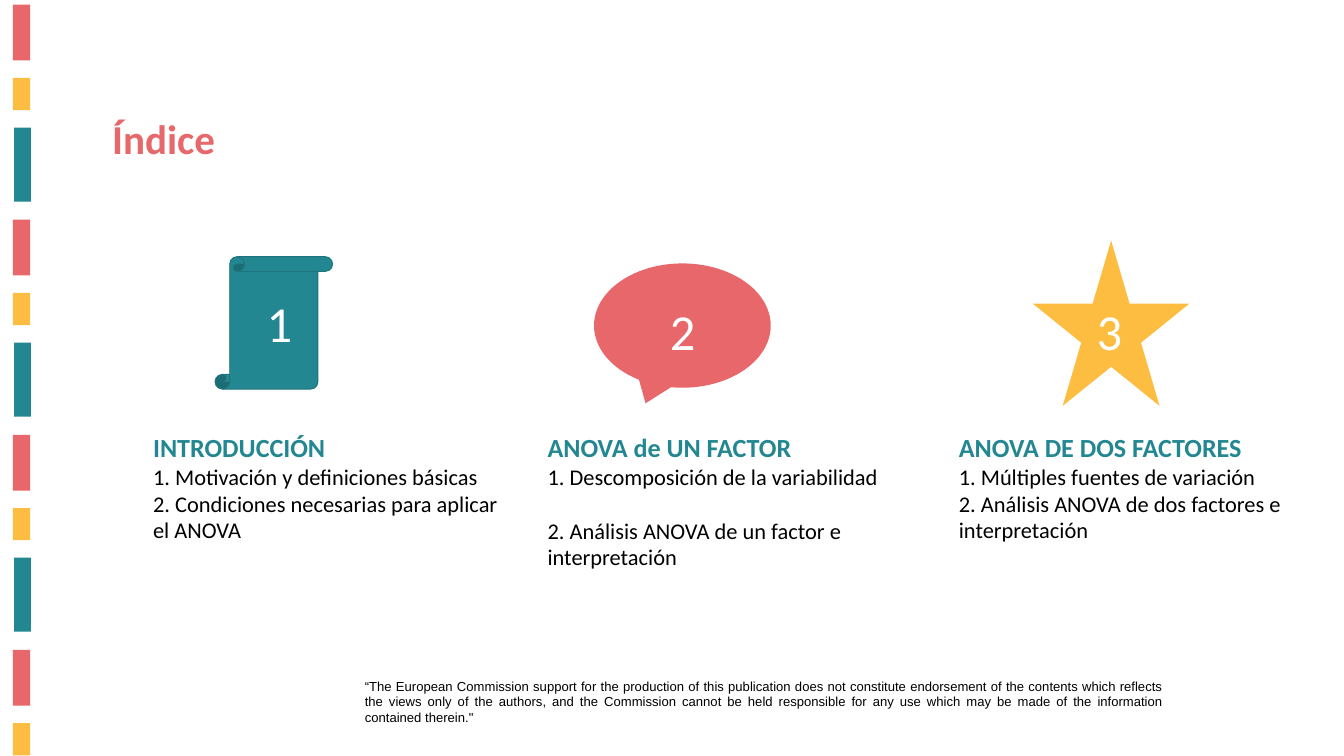
from pptx import Presentation
from pptx.dml.color import RGBColor
from pptx.enum.shapes import MSO_SHAPE
from pptx.enum.text import PP_ALIGN
from pptx.util import Inches, Pt

RECTANGLE = MSO_SHAPE.RECTANGLE
SCROLL = MSO_SHAPE.VERTICAL_SCROLL
CALLOUT = MSO_SHAPE.OVAL_CALLOUT
STAR = MSO_SHAPE.STAR_5_POINT
LEFT = PP_ALIGN.LEFT
JUSTIFY = PP_ALIGN.JUSTIFY

TEAL = RGBColor(0x23, 0x87, 0x91)
DARK_TEAL = RGBColor(0x1E, 0x73, 0x7C)
CORAL = RGBColor(0xE8, 0x67, 0x6A)
TITLE_CORAL = RGBColor(0xE7, 0x68, 0x6A)
YELLOW = RGBColor(0xFD, 0xBD, 0x40)
BLACK = RGBColor(0, 0, 0)
WHITE = RGBColor(255, 255, 255)

WIDTH, HEIGHT = 20, 11.25
STRIPE_PERIOD = 3.2
SECTION_TOP = 6.37

TITLE = "Índice"
DISCLAIMER = (
    "“The European Commission support for the production of this publication does not "
    "constitute endorsement of the contents which reflects the views only of the authors, "
    "and the Commission cannot be held responsible for any use which may be made of the "
    "information contained therein.\""
)

STRIPES = [
    (0.19, 0.07, 0.26, 0.83, CORAL),
    (0.19, 1.16, 0.26, 0.48, YELLOW),
    (0.21, 1.9, 0.25, 1.1, TEAL),
]

SECTIONS = [
    {
        "heading": "INTRODUCCIÓN",
        "items": ["1. Motivación y definiciones básicas",
                  "2. Condiciones necesarias para aplicar el ANOVA"],
        "left": 2.18, "width": 5.35, "item_gap": 0,
        "icon": (SCROLL, 3.2, 3.82, 1.75, 1.97, TEAL, DARK_TEAL),
        "number_box": (3.87, 4.3, 1.58, 1.01),
    },
    {
        "heading": "ANOVA de UN FACTOR",
        "items": ["1. Descomposición de la variabilidad",
                  "2. Análisis ANOVA de un factor e interpretación"],
        "left": 8.05, "width": 5.17, "item_gap": 29,
        "icon": (CALLOUT, 8.84, 3.92, 2.63, 1.85, CORAL, None),
        "number_box": (9.87, 4.41, 1.08, 1.01),
    },
    {
        "heading": "ANOVA DE DOS FACTORES",
        "items": ["1. Múltiples fuentes de variación",
                  "2. Análisis ANOVA de dos factores e interpretación"],
        "left": 14.17, "width": 5.4, "item_gap": 0,
        "icon": (STAR, 15.37, 3.58, 2.33, 2.46, YELLOW, None),
        "number_box": (16.22, 4.41, 1.5, 1.01),
    },
]


def add_text_box(slide, left, top, width, height):
    box = slide.shapes.add_textbox(Inches(left), Inches(top), Inches(width), Inches(height))
    box.text_frame.word_wrap = True
    return box.text_frame


def write(frame, text, size, color, bold=False, font="Calibri", align=LEFT, before=0):
    paragraph = frame.paragraphs[0]
    if paragraph.runs:
        paragraph = frame.add_paragraph()
    paragraph.alignment = align
    paragraph.space_before = Pt(before)
    run = paragraph.add_run()
    run.text = text
    run.font.name = font
    run.font.size = Pt(size)
    run.font.bold = bold
    run.font.color.rgb = color


def add_filled_shape(slide, kind, left, top, width, height, fill, line=None):
    shape = slide.shapes.add_shape(
        kind, Inches(left), Inches(top), Inches(width), Inches(height))
    shape.shadow.inherit = False
    shape.fill.solid()
    shape.fill.fore_color.rgb = fill
    if line is None:
        shape.line.fill.background()
    else:
        shape.line.color.rgb = line
        shape.line.width = Pt(1)


def add_stripes(slide):
    for cycle in range(4):
        for left, first_top, width, height, color in STRIPES:
            top = first_top + cycle * STRIPE_PERIOD
            if top < HEIGHT:
                add_filled_shape(slide, RECTANGLE, left, top, width, height, color)


def add_section(slide, number, section):
    add_filled_shape(slide, *section["icon"])
    write(add_text_box(slide, *section["number_box"]), str(number), 54, WHITE)
    frame = add_text_box(slide, section["left"], SECTION_TOP, section["width"], 2.49)
    write(frame, section["heading"], 28, TEAL, bold=True)
    first, second = section["items"]
    write(frame, first, 24, BLACK)
    write(frame, second, 24, BLACK, before=section["item_gap"])


def main():
    presentation = Presentation()
    presentation.slide_width = Inches(WIDTH)
    presentation.slide_height = Inches(HEIGHT)
    slide = presentation.slides.add_slide(presentation.slide_layouts[6])
    add_stripes(slide)
    write(add_text_box(slide, 5.33, 10.04, 12.08, 0.81), DISCLAIMER, 14, BLACK,
          font="Arial", align=JUSTIFY)
    write(add_text_box(slide, 1.57, 1.64, 6.77, 1.58), TITLE, 44, TITLE_CORAL, bold=True)
    for number, section in enumerate(SECTIONS, start=1):
        add_section(slide, number, section)
    presentation.save("out.pptx")


if __name__ == "__main__":
    main()
